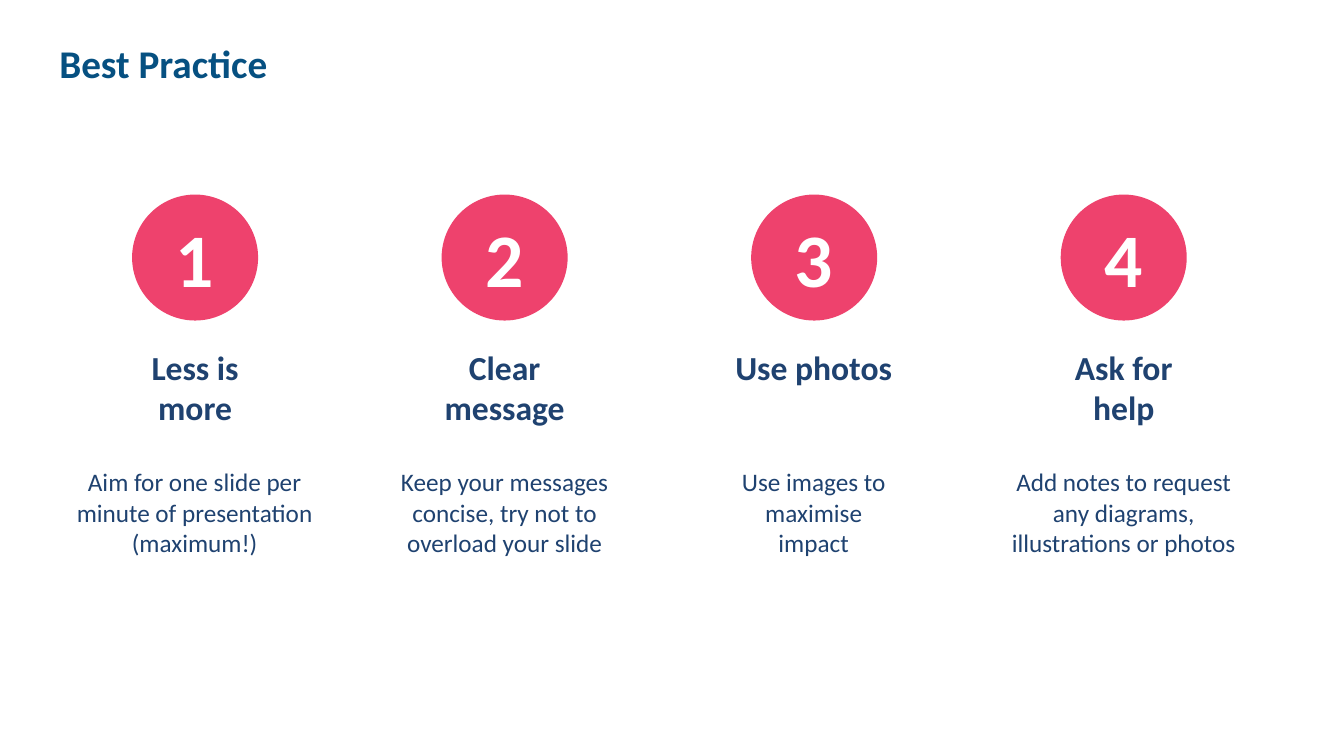
from dataclasses import dataclass

from pptx import Presentation
from pptx.dml.color import RGBColor
from pptx.enum.shapes import MSO_SHAPE
from pptx.enum.text import MSO_ANCHOR, MSO_AUTO_SIZE, PP_ALIGN
from pptx.util import Emu, Pt

OVAL = MSO_SHAPE.OVAL
LEFT, CENTER = PP_ALIGN.LEFT, PP_ALIGN.CENTER
TOP, MIDDLE = MSO_ANCHOR.TOP, MSO_ANCHOR.MIDDLE
FIT_SHAPE = MSO_AUTO_SIZE.SHAPE_TO_FIT_TEXT
EMU_PER_PX = 9144


def px(length):
    return Emu(length * EMU_PER_PX)


@dataclass(frozen=True)
class Theme:
    font: str = "Calibri"
    title_color: RGBColor = RGBColor(0x06, 0x50, 0x81)
    text_color: RGBColor = RGBColor(0x1F, 0x42, 0x70)
    badge_color: RGBColor = RGBColor(0xEE, 0x42, 0x6D)
    number_color: RGBColor = RGBColor(0xFF, 0xFF, 0xFF)
    title_size: int = 28
    number_size: int = 54
    heading_size: int = 24
    body_size: int = 18


class SlideBuilder:
    def __init__(self, slide, theme):
        self.slide = slide
        self.theme = theme

    def set_text(self, frame, text, size, color, bold, align, anchor):
        frame.word_wrap = True
        frame.vertical_anchor = anchor
        frame.text = text
        paragraph = frame.paragraphs[0]
        paragraph.alignment = align
        font = paragraph.runs[0].font
        font.name = self.theme.font
        font.size = Pt(size)
        font.bold = bold
        font.color.rgb = color
        return paragraph

    def title(self, text, left, top, width, height):
        box = self.slide.shapes.add_textbox(px(left), px(top), px(width), px(height))
        line = self.set_text(box.text_frame, text, self.theme.title_size,
                             self.theme.title_color, True, LEFT, MIDDLE)
        line.line_spacing = 0.9

    def badge(self, number, center, top, diameter):
        circle = self.slide.shapes.add_shape(
            OVAL, px(center - diameter // 2), px(top), px(diameter), px(diameter))
        circle.shadow.inherit = False
        circle.fill.solid()
        circle.fill.fore_color.rgb = self.theme.badge_color
        circle.line.fill.background()
        self.set_text(circle.text_frame, str(number), self.theme.number_size,
                      self.theme.number_color, True, CENTER, MIDDLE)

    def label(self, text, center, top, width, height, size, bold=False):
        box = self.slide.shapes.add_textbox(
            px(center - width // 2), px(top), px(width), px(height))
        self.set_text(box.text_frame, text, size, self.theme.text_color, bold, CENTER, TOP)
        box.text_frame.auto_size = FIT_SHAPE


FIRST_CENTER, TIP_PITCH = 193, 307
TIPS = [
    ("Less is more", 181, 91,
     "Aim for one slide per minute of presentation (maximum!)", 258),
    ("Clear message", 181, 91,
     "Keep your messages concise, try not to overload your slide", 253),
    ("Use photos", 222, 50,
     "Use images to maximise impact", 190),
    ("Ask for help", 181, 91,
     "Add notes to request any diagrams, illustrations or photos", 243),
]


def main():
    deck = Presentation()
    deck.slide_width, deck.slide_height = px(1333), px(750)
    theme = Theme()
    builder = SlideBuilder(deck.slides.add_slide(deck.slide_layouts[6]), theme)

    builder.title("Best Practice", 49, 42, 1082, 47)
    for index, (heading, heading_width, heading_height, advice, advice_width) in enumerate(TIPS):
        center = FIRST_CENTER + index * TIP_PITCH
        builder.badge(index + 1, center, 193, 125)
        builder.label(heading, center, 339, heading_width, heading_height,
                      theme.heading_size, bold=True)
        builder.label(advice, center, 458, advice_width, 101, theme.body_size)

    deck.save("out.pptx")


if __name__ == "__main__":
    main()
